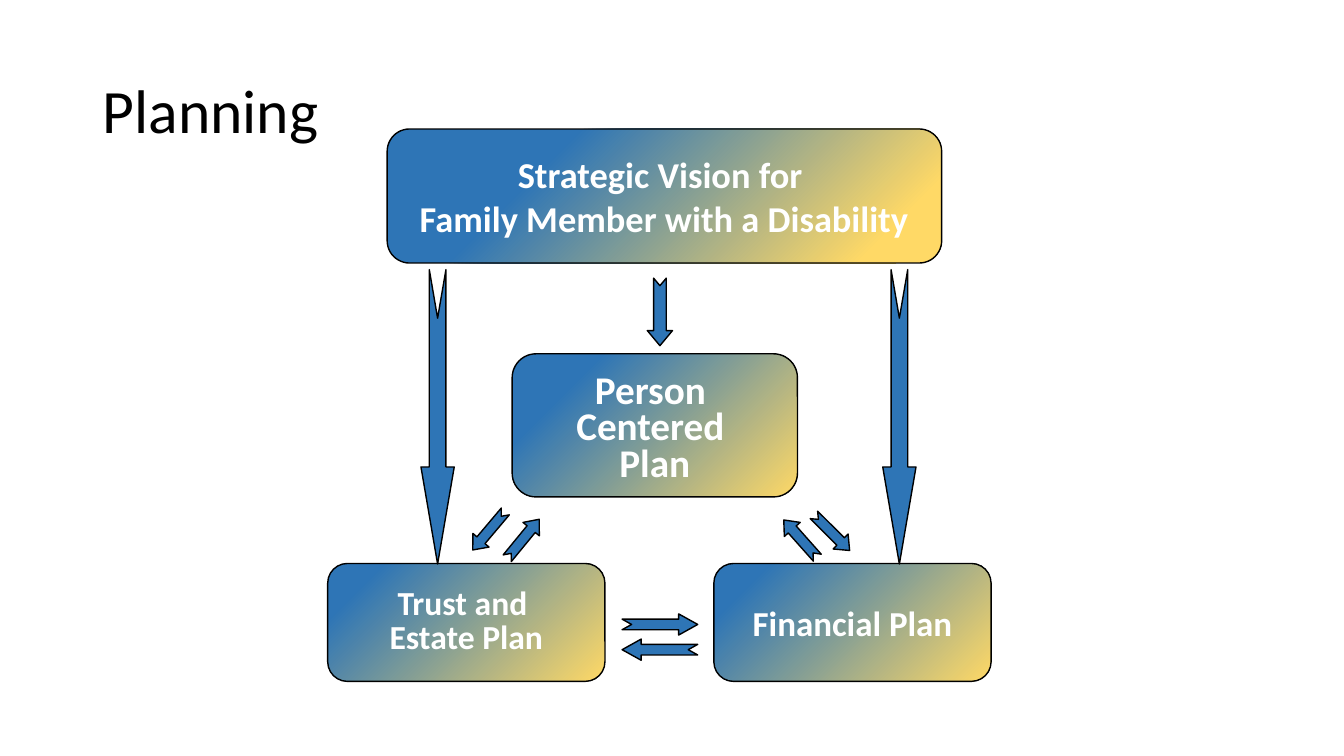
from dataclasses import dataclass
from pptx import Presentation
from pptx.dml.color import RGBColor as Rgb
from pptx.enum.shapes import MSO_SHAPE as Kind
from pptx.enum.text import MSO_ANCHOR as Anchor, PP_ALIGN as Align
from pptx.util import Emu, Pt


@dataclass(frozen=True)
class Theme:
    font: str = "Calibri"
    blue: Rgb = Rgb(0x2E, 0x75, 0xB6)
    gold: Rgb = Rgb(0xFF, 0xD9, 0x66)
    black: Rgb = Rgb(0, 0, 0)
    white: Rgb = Rgb(255, 255, 255)
    title: int = 44
    vision: int = 26
    person: int = 28
    trust: int = 24
    money: int = 25


THEME = Theme()
UNIT = 9144  # EMU per px, 100 px to the inch


def px(*nums):
    return [Emu(n * UNIT) for n in nums]


def style(para, size, color, bold=False):
    for run in para.runs:
        font = run.font
        font.name, font.size, font.bold = THEME.font, Pt(size), bold
        font.color.rgb = color


def outline(shape):
    shape.shadow.inherit = False
    shape.line.color.rgb = THEME.black
    shape.line.width = Pt(1)


def title(slide, box, text):
    frame = slide.shapes.add_textbox(*px(*box)).text_frame
    frame.word_wrap = True
    frame.vertical_anchor = Anchor.MIDDLE
    frame.text = text
    para = frame.paragraphs[0]
    para.line_spacing = 0.9
    style(para, THEME.title, THEME.black)


def card(slide, box, text, size, stops, lead=None, anchor=Anchor.MIDDLE):
    shape = slide.shapes.add_shape(Kind.ROUNDED_RECTANGLE, *px(*box))
    shape.adjustments[0] = 0.167
    outline(shape)

    # Blue to gold, from top left to bottom right
    fill = shape.fill
    fill.gradient()
    fill.gradient_angle = 315
    for stop, place, color in zip(fill.gradient_stops, stops, (THEME.blue, THEME.gold)):
        stop.color.rgb = color
        stop.position = place

    frame = shape.text_frame
    frame.word_wrap = False
    frame.vertical_anchor = anchor
    frame.text = text
    for para in frame.paragraphs:
        para.alignment = Align.CENTER
        if lead:
            para.line_spacing = Pt(lead)
        style(para, size, THEME.white, True)


def arrow(slide, box, turn, head):
    shape = slide.shapes.add_shape(Kind.NOTCHED_RIGHT_ARROW, *px(*box))
    shape.adjustments[0] = 0.5
    shape.adjustments[1] = head
    shape.rotation = turn
    shape.fill.solid()
    shape.fill.fore_color.rgb = THEME.blue
    outline(shape)


def cards(slide, left, top):
    card(slide, (left + 59, top, 550, 133),
         "Strategic Vision for \nFamily Member with a Disability",
         THEME.vision, (0.28, 0.88))
    card(slide, (left + 183, top + 223, 283, 142), "Person \nCentered \nPlan",
         THEME.person, (0.21, 1), 26, Anchor.BOTTOM)
    low = top + 431
    card(slide, (left, low, 275, 117), "Trust and \nEstate Plan",
         THEME.trust, (0.14, 1), 24)
    card(slide, (left + 383, low, 275, 117), "Financial Plan",
         THEME.money, (0.14, 1))


def arrows(slide, left, top):
    # Vision down to the three plans
    for x in (-37, 421):
        arrow(slide, (left + x, top + 269, 292, 33), 90, 2.917)
    arrow(slide, (left + 296, top + 169, 67, 25), 90, 0.6)

    # Between the two lower plans
    for i in range(2):
        arrow(slide, (left + 292, top + 481 + 25 * i, 75, 21), 180 * i, 0.9)

    # Between the person's plan and the lower plans
    for x, y, turn in ((169, 396, 309.4), (135, 388, 130.2),
                       (444, 396, 228.4), (475, 390, 44.9)):
        arrow(slide, (left + x, top + y, 50, 21), turn, 0.6)


def main():
    deck = Presentation()
    deck.slide_width, deck.slide_height = px(1333, 750)
    slide = deck.slides.add_slide(deck.slide_layouts[6])
    title(slide, (92, 40, 1150, 145), "Planning")
    cards(slide, 325, 128)
    arrows(slide, 325, 128)
    deck.save("out.pptx")


if __name__ == "__main__":
    main()
